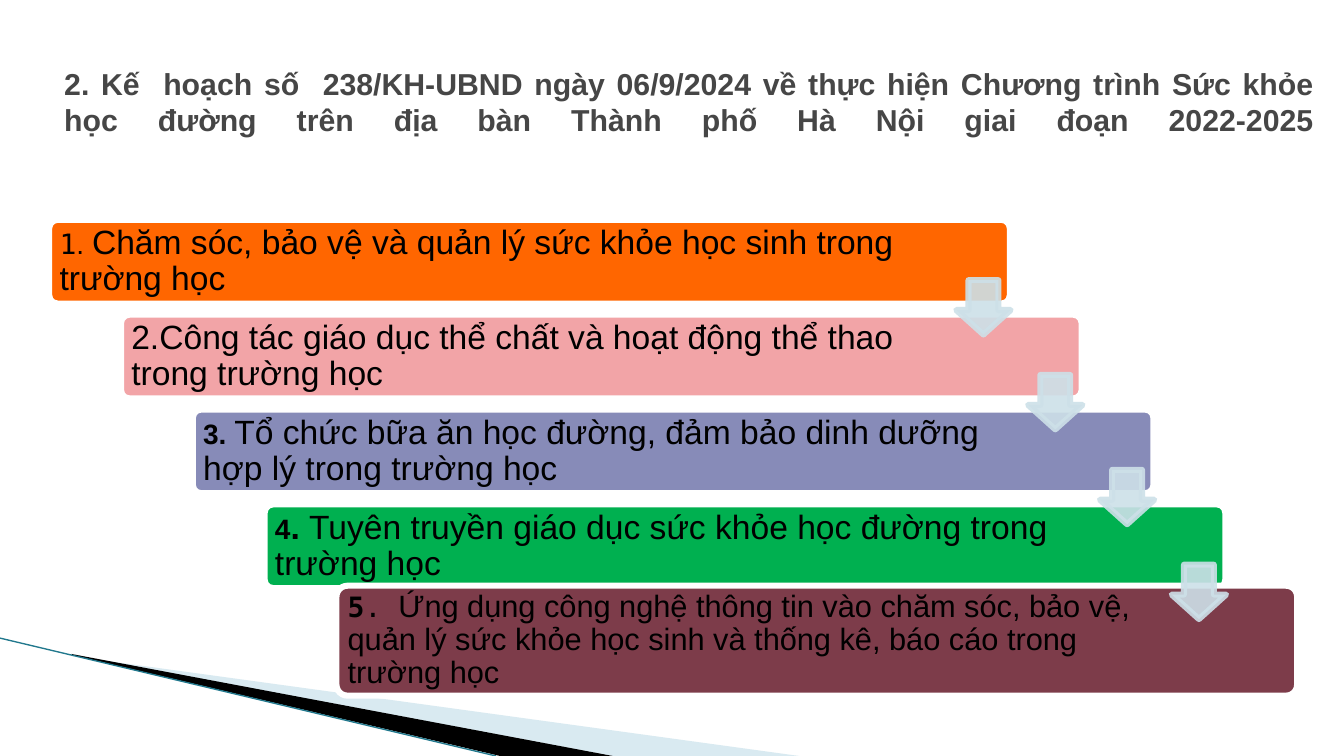
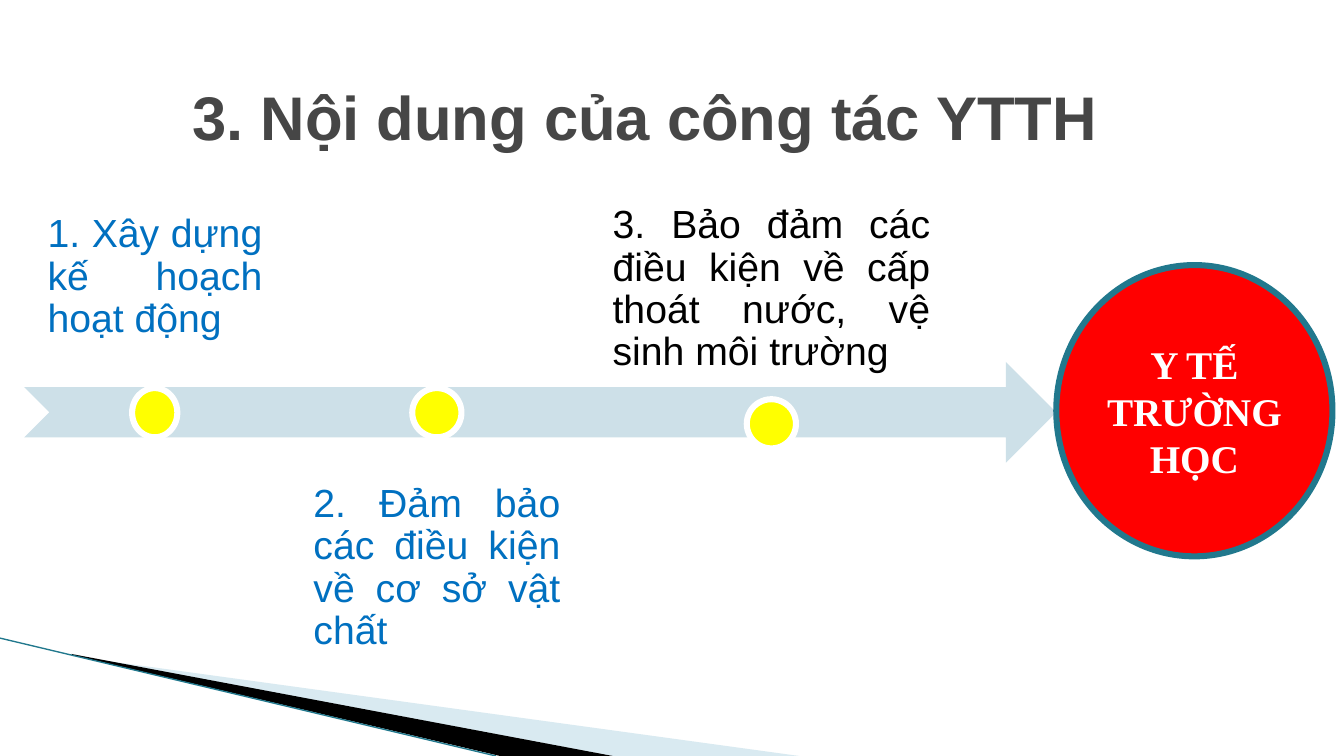
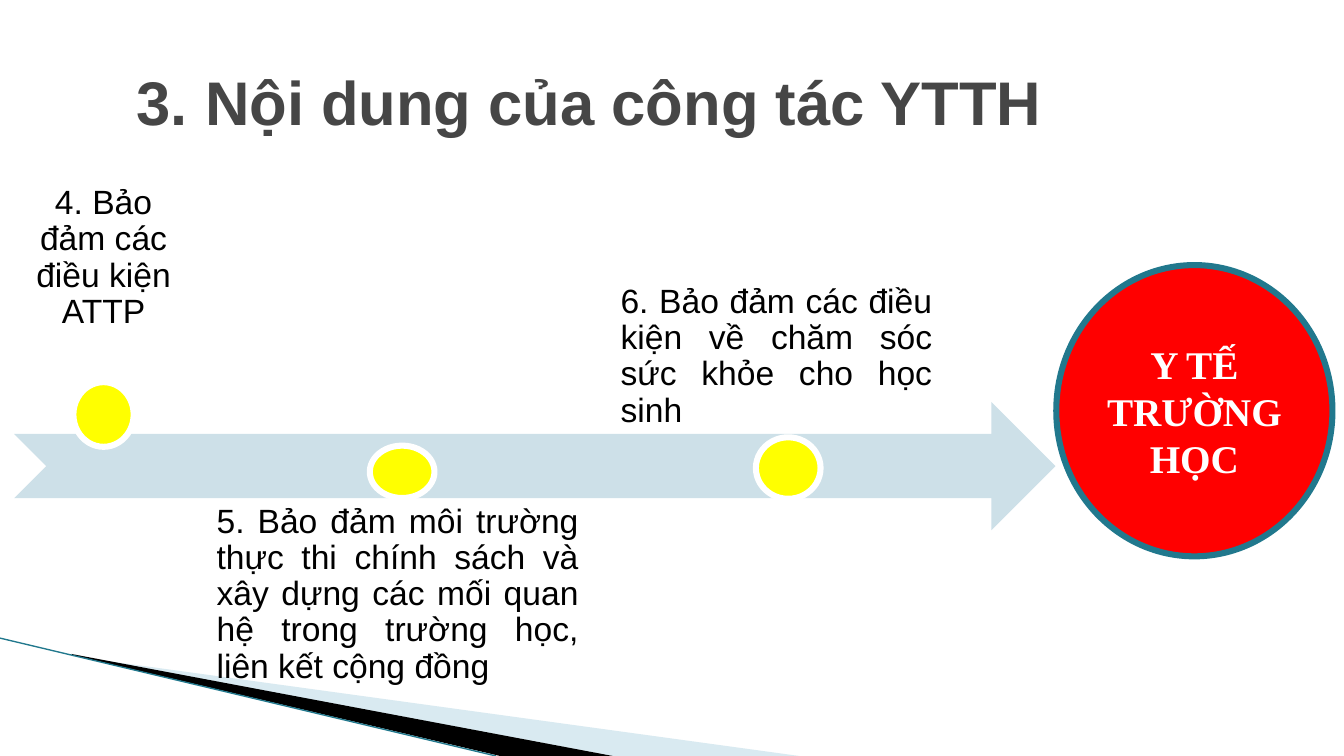
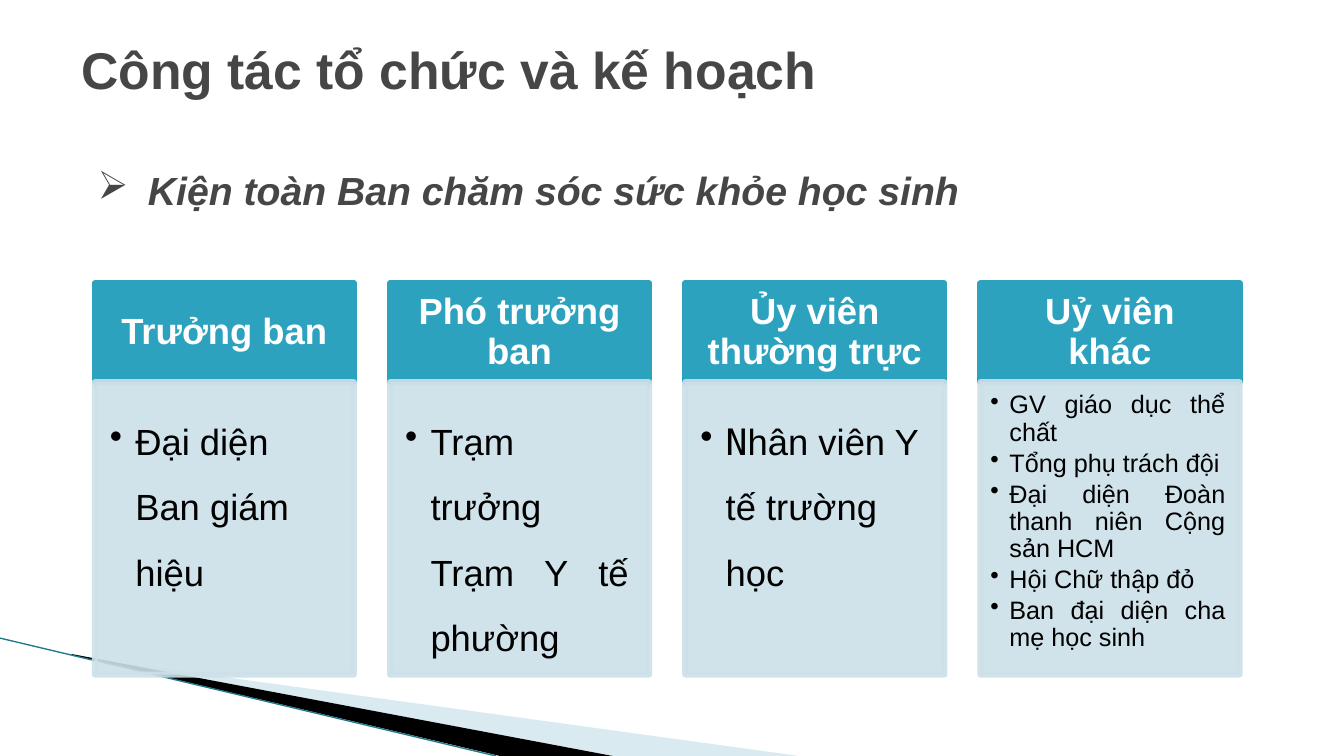
from dataclasses import dataclass
from typing import Optional

from lxml import etree
from pptx import Presentation
from pptx import util as u
from pptx.dml.color import RGBColor
from pptx.enum import shapes, text
from pptx.oxml.ns import qn

# Shared colours and formats
BLACK, WHITE, GREY, BLUE = "000000", "FFFFFF", "464646", "0070C0"
TEAL, DARK_TEAL, PALE = "2DA2BF", "21788D", "CDE0E8"
YELLOW, RED = "FFFF00", "FF0000"
MONO, SERIF = "DejaVu Sans Mono", "Times New Roman"
LINE_WIDTH = 4.33

SHAPE = shapes.MSO_SHAPE
LEFT, CENTER, RIGHT, JUSTIFY = (
    text.PP_ALIGN.LEFT, text.PP_ALIGN.CENTER, text.PP_ALIGN.RIGHT, text.PP_ALIGN.JUSTIFY)
TOP, MIDDLE, BOTTOM = (
    text.MSO_ANCHOR.TOP, text.MSO_ANCHOR.MIDDLE, text.MSO_ANCHOR.BOTTOM)

Box = tuple[float, float, float, float]      # left, top, width, height in cm
Insets = tuple[float, float, float, float]   # left, top, right, bottom in cm
DEFAULT_INSETS: Insets = (0.25, 0.13, 0.25, 0.13)


@dataclass(frozen=True)
class Run:
    text: str
    size: float
    color: str = BLACK
    font: str = "Arial"
    bold: bool = False
    italic: bool = False


@dataclass(frozen=True)
class Para:
    runs: list[Run]
    align: text.PP_ALIGN = LEFT
    spacing: float = 1.0
    after: float = 0
    bullet: str = ""
    indent: float = 0
    end_break: bool = False


@dataclass(frozen=True)
class Bar:
    fill: str
    runs: list[Run]
    height: float = 2.11
    right_inset: float = 3.3
    top: Optional[float] = None


@dataclass(frozen=True)
class Milestone:
    label: str
    box: Box
    dot: Box
    anchor: text.MSO_ANCHOR = BOTTOM
    color: str = BLACK
    align: text.PP_ALIGN = JUSTIFY


@dataclass(frozen=True)
class Column:
    heading: str
    paras: list[Para]
    insets: Insets = (0.38, 0.38, 0.51, 0.58)


# Drawing helpers
def rgb(value: str) -> RGBColor:
    return RGBColor.from_string(value)


def cm(values) -> list[u.Cm]:
    return [u.Cm(v) for v in values]


def write(sp, paras: list[Para], anchor=MIDDLE, insets: Insets = DEFAULT_INSETS) -> None:
    tf = sp.text_frame
    left, top, right, bottom = cm(insets)
    frame = {"word_wrap": True, "vertical_anchor": anchor, "margin_left": left,
             "margin_top": top, "margin_right": right, "margin_bottom": bottom}
    for name, value in frame.items():
        setattr(tf, name, value)
    for i, para in enumerate(paras):
        p = tf.add_paragraph() if i else tf.paragraphs[0]
        if para.bullet:
            pPr = p._p.get_or_add_pPr()
            pPr.set("marL", str(u.Cm(para.indent)))
            pPr.set("indent", str(-u.Cm(para.indent)))
            etree.SubElement(pPr, qn("a:buChar")).set("char", para.bullet)
        layout = {"alignment": para.align, "line_spacing": para.spacing,
                  "space_before": u.Pt(0), "space_after": u.Pt(para.after)}
        for name, value in layout.items():
            setattr(p, name, value)
        for run in para.runs:
            r = p.add_run()
            r.text = run.text
            style = {"name": run.font, "size": u.Pt(run.size),
                     "bold": run.bold, "italic": run.italic}
            for name, value in style.items():
                setattr(r.font, name, value)
            r.font.color.rgb = rgb(run.color)
        if para.end_break:
            p.add_line_break()


def paint(sp, fill: str, line: Optional[str] = None, opacity: int = 100) -> None:
    sp.shadow.inherit = False
    sp.fill.solid()
    sp.fill.fore_color.rgb = rgb(fill)
    if line:
        sp.line.color.rgb = rgb(line)
        sp.line.width = u.Pt(LINE_WIDTH)
    else:
        sp.line.fill.background()
    if opacity < 100:
        for color in sp._element.spPr.iter(qn("a:srgbClr")):
            etree.SubElement(color, qn("a:alpha")).set("val", str(opacity * 1000))


def add_shape(s, kind, box: Box, fill: str, line: Optional[str] = None,
              opacity: int = 100, adjust: tuple[float, ...] = ()):
    sp = s.shapes.add_shape(kind, *cm(box))
    paint(sp, fill, line, opacity)
    for i, value in enumerate(adjust):
        sp.adjustments[i] = value
    return sp


def add_text(s, box: Box, paras: list[Para], anchor=MIDDLE,
             insets: Insets = DEFAULT_INSETS) -> None:
    write(s.shapes.add_textbox(*cm(box)), paras, anchor, insets)


def add_title(s, box: Box, title: str, size: float, align=LEFT, anchor=MIDDLE,
              end_break: bool = False) -> None:
    run = Run(title, size, GREY, bold=True)
    add_text(s, box, [Para([run], align, end_break=end_break)], anchor)


def add_wedge(s, points: list[tuple[float, float]], fill: str, opacity: int = 100) -> None:
    start, *rest = [cm(point) for point in points]
    builder = s.shapes.build_freeform(*start)
    builder.add_line_segments(rest, close=True)
    paint(builder.convert_to_shape(), fill, opacity=opacity)


def new_slide(prs):
    """Blank slide with the corner wedges and thin line."""
    s = prs.slides.add_slide(prs.slide_layouts[6])
    add_wedge(s, [(1.85, 16.54), (20.14, 19.05), (15.44, 19.05), (1.85, 16.51)], "A0CBDC", 40)
    add_wedge(s, [(1.8, 16.48), (15.44, 19.05), (12.6, 19.05), (1.83, 16.51)], BLACK)
    edge = s.shapes.add_connector(shapes.MSO_CONNECTOR.STRAIGHT, *cm((0, 16.08, 12.5, 19.05)))
    edge.line.color.rgb = rgb(DARK_TEAL)
    edge.line.width = u.Pt(0.95)
    etree.SubElement(edge._element.spPr, qn("a:effectLst"))
    return s


# Slide 1: staircase of bars
BARS = [
    Bar("FF6600", [Run("1", 20, font=MONO), Run(". ", 20),
                   Run("Chăm sóc, bảo vệ và quản lý sức khỏe học sinh trong trường học", 24)],
        right_inset=2.55),
    Bar("F2A4A7", [Run("2.Công tác giáo dục thể chất và hoạt động thể thao trong trường học", 24)]),
    Bar("878BB8", [Run("3. ", 20, bold=True),
                   Run("Tổ chức bữa ăn học đường, đảm bảo dinh dưỡng hợp lý trong trường học", 24)]),
    Bar("00B050", [Run("4", 20, bold=True), Run(". ", 24, bold=True),
                   Run("Tuyên truyền giáo dục sức khỏe học đường trong trường học", 24)]),
    Bar("7D3C4A", [Run("5", 20, font=MONO, bold=True), Run(". ", 20, font=MONO),
                   Run("Ứng dụng công nghệ thông tin vào chăm sóc, bảo vệ, quản lý sức khỏe "
                       "học sinh và thống kê, báo cáo trong trường học", 22)],
        height=2.77, top=14.76),
]
STEP_X, STEP_Y = 1.81, 2.39


def staircase_slide(prs) -> None:
    s = new_slide(prs)
    for i, bar in enumerate(BARS):
        top = 5.54 + i * STEP_Y if bar.top is None else bar.top
        box = (1.24 + i * STEP_X, top, 24.21, bar.height)
        sp = add_shape(s, SHAPE.ROUNDED_RECTANGLE, box, bar.fill, WHITE, adjust=(0.1,))
        write(sp, [Para(bar.runs, spacing=0.9)], insets=(0.2, 0, bar.right_inset, 0))
    for i in range(len(BARS) - 1):
        add_shape(s, SHAPE.DOWN_ARROW, (24.1 + i * STEP_X, 7.06 + i * STEP_Y, 1.37, 1.37),
                  PALE, PALE, 90, (0.55, 0.45))
    add_title(s, (1.37, 1.51, 32, 2.9),
              "2. Kế  hoạch số  238/KH-UBND ngày 06/9/2024 về thực hiện Chương trình Sức khỏe "
              "học đường trên địa bàn Thành phố Hà Nội giai đoạn 2022-2025",
              21.6, JUSTIFY, TOP, end_break=True)


# Slides 2 and 3: timelines
FIRST_MILESTONES = [
    Milestone("1. Xây dựng kế hoạch hoạt động", (0.64, 4.22, 6.53, 4.93),
              (3.33, 9.78, 1.14, 1.24), color=BLUE),
    Milestone("2. Đảm bảo các điều kiện về cơ sở vật chất", (7.34, 11.63, 7.34, 4.93),
              (10.39, 9.78, 1.24, 1.24), TOP, BLUE),
    Milestone("3. Bảo đảm các điều kiện về cấp thoát nước, vệ sinh môi trường",
              (14.88, 3.94, 9.12, 6.05), (18.82, 10.06, 1.24, 1.24)),
]
LAST_MILESTONES = [
    Milestone("4. Bảo đảm các điều kiện ATTP", (0.36, 4.06, 4.5, 4.75),
              (1.85, 9.63, 1.52, 1.63), align=CENTER),
    Milestone("5. Bảo đảm môi trường thực thi chính sách và xây dựng các mối quan hệ "
              "trong trường học, liên kết cộng đồng", (4.98, 12.22, 10.08, 6.6),
              (9.32, 11.23, 1.63, 1.32), TOP),
    Milestone("6. Bảo đảm các điều kiện về chăm sóc sức khỏe cho học sinh",
              (15.16, 3.2, 8.81, 8.1), (19.05, 11.02, 1.63, 1.55)),
]


def timeline_slide(prs, arrow: Box, milestones: list[Milestone], size: float, inset: float,
                   title_height: float, title_align) -> None:
    s = new_slide(prs)
    add_shape(s, SHAPE.NOTCHED_RIGHT_ARROW, arrow, PALE)
    for m in milestones:
        para = Para([Run(m.label, size, m.color)], m.align, 0.9)
        add_text(s, m.box, [para], m.anchor, (inset,) * 4)
        add_shape(s, SHAPE.OVAL, m.dot, YELLOW, WHITE)
    add_title(s, (1.8, 1.27, 26.14, title_height), "3. Nội dung của công tác YTTH",
              44, title_align)
    goal = add_shape(s, SHAPE.OVAL, (26.62, 6.68, 6.96, 7.34), RED, DARK_TEAL)
    write(goal, [Para([Run("Y TẾ TRƯỜNG HỌC", 28, WHITE, SERIF, True)], CENTER)])


# Slide 4: committee columns
def member(*runs: Run, align=LEFT) -> Para:
    return Para(list(runs), align, 1.5, bullet="•", indent=0.64)


OTHER_MEMBERS = ["GV giáo dục thể chất", "Tổng phụ trách đội",
                 "Đại diện Đoàn thanh niên Cộng sản HCM", "Hội Chữ thập đỏ",
                 "Ban đại diện cha mẹ học sinh"]
COLUMNS = [
    Column("Trưởng ban", [member(Run("Đại diện Ban giám hiệu", 26))]),
    Column("Phó trưởng ban", [member(Run("Trạm trưởng Trạm Y tế phường", 26), align=JUSTIFY)]),
    Column("Ủy viên thường trực",
           [member(Run("N", 26, font=MONO), Run("hân viên Y tế trường học", 26))]),
    Column("Uỷ viên khác",
           [Para([Run(name, 18)], JUSTIFY, 0.9, 2.7, "•", 0.48) for name in OTHER_MEMBERS],
           (0.25, 0.25, 0.36, 0.41)),
]


def committee_slide(prs) -> None:
    s = new_slide(prs)
    for i, column in enumerate(COLUMNS):
        left, width = 2.39 + i * 7.44, 6.53
        head = add_shape(s, SHAPE.RECTANGLE, (left, 7.14, width, 2.49), TEAL, TEAL)
        write(head, [Para([Run(column.heading, 26, WHITE, bold=True)], CENTER, 0.9)],
              insets=(0.51, 0.3, 0.51, 0.3))
        body = add_shape(s, SHAPE.RECTANGLE, (left, 9.63, width, 7.37), PALE, PALE, 90)
        write(body, column.paras, TOP, column.insets)
    add_title(s, (1.8, 0.66, 31.47, 2.13), "Công tác tổ chức và kế hoạch", 36.9)
    subtitle = Run("Kiện toàn Ban chăm sóc sức khỏe học sinh", 28, GREY, bold=True, italic=True)
    add_text(s, (2.21, 4.06, 31.47, 2.24), [Para([subtitle], bullet="➢", indent=1.27)], TOP)


def main() -> None:
    prs = Presentation()
    prs.slide_width, prs.slide_height = cm((33.87, 19.05))
    staircase_slide(prs)
    timeline_slide(prs, (0.61, 9.12, 26.01, 2.54), FIRST_MILESTONES, 28, 0.56, 3.3, RIGHT)
    timeline_slide(prs, (0.36, 10.13, 26.24, 3.23), LAST_MILESTONES, 24, 0.48, 2.54, CENTER)
    committee_slide(prs)
    prs.save("out.pptx")


if __name__ == "__main__":
    main()
